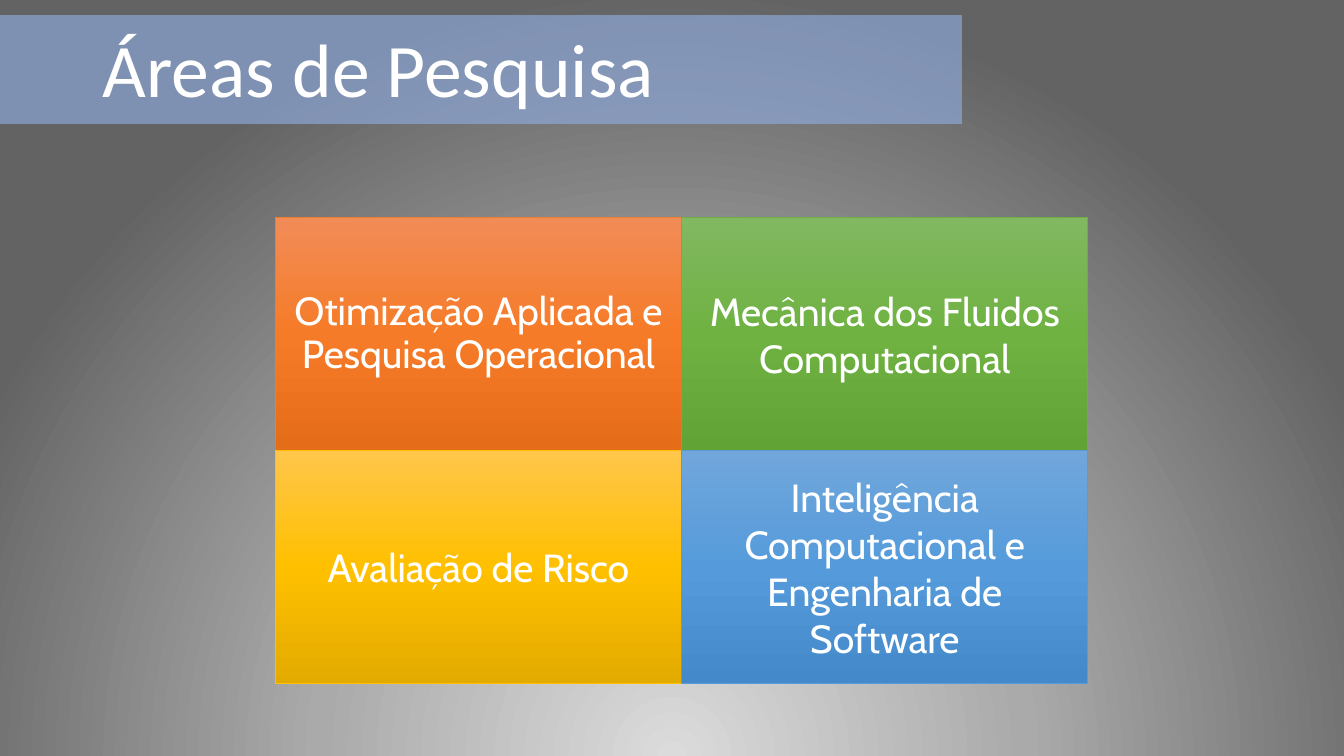
from pptx import Presentation
from pptx import util as u
from pptx.dml.color import RGBColor
from pptx.enum import shapes, text
from pptx.oxml import parse_xml
from pptx.oxml.ns import nsdecls, qn
from lxml import etree

HUES = {
    "white": "FFFFFF",
    "band": "8FAADC",
    "back": ["DBDBDB", "AAAAAA", "636363"],
    "orange": ["F18C57", "F67B28", "E56C19", "ED7D31"],
    "green": ["81B861", "6FB242", "62A336", "70AD47"],
    "gold": ["FFC64B", "FFC000", "E3AB00", "FFC000"],
    "blue": ["71A6DB", "559BDB", "448ACA", "5B9BD5"],
}
LINEAR = '<a:lin ang="5400000" scaled="0"/>'
RADIAL = ('<a:path path="circle"><a:fillToRect l="50000" t="130000" '
          'r="50000" b="-30000"/></a:path>')


class Page:
    title_font = {"name": "Calibri", "size": u.Pt(54), "bold": False}
    tile_font = {"name": "Cabin", "size": u.Pt(28)}

    def __init__(self, deck):
        self.slide = deck.slides.add_slide(deck.slide_layouts[5])

    def rect(self, *box):
        shape = self.slide.shapes.add_shape(
            shapes.MSO_SHAPE.RECTANGLE, *map(u.Inches, box))
        shape.shadow.inherit = False
        shape.line.fill.background()
        return shape

    def blend(self, shape, hues, mid, kind):
        stops = "".join(
            f'<a:gs pos="{pos * 1000}"><a:srgbClr val="{hue}"/></a:gs>'
            for pos, hue in zip((0, mid, 100), hues))
        grad = parse_xml(f'<a:gradFill {nsdecls("a")} rotWithShape="1">'
                         f'<a:gsLst>{stops}</a:gsLst>{kind}</a:gradFill>')
        shape._element.spPr.find(qn("a:prstGeom")).addnext(grad)

    def label(self, shape, words, font, align, space):
        frame = shape.text_frame
        frame.text = words
        frame.word_wrap = True
        frame.vertical_anchor = text.MSO_ANCHOR.MIDDLE
        para = frame.paragraphs[0]
        para.alignment = align
        para.line_spacing = space
        style = para.runs[0].font
        for key, value in font.items():
            setattr(style, key, value)
        style.color.rgb = RGBColor.from_string(HUES["white"])

    def back(self):
        self.blend(self.rect(0, 0, 13.33, 7.5), HUES["back"], 46, RADIAL)

    def band(self):
        shape = self.rect(0, 0.15, 9.54, 1.08)
        shape.fill.solid()
        shape.fill.fore_color.rgb = RGBColor.from_string(HUES["band"])
        hue = shape._element.spPr.find(".//" + qn("a:srgbClr"))
        etree.SubElement(hue, qn("a:alpha")).set("val", "66000")

    def title(self, words):
        shape = self.slide.shapes.title
        box = {"left": 0.92, "top": 0, "width": 10.99, "height": 1.45}
        for key, value in box.items():
            setattr(shape, key, u.Inches(value))
        self.label(shape, words, self.title_font, text.PP_ALIGN.LEFT, 0.9)
        self.slide.shapes._spTree.append(shape._element)

    def tile(self, box, words, hue, space):
        shape = self.rect(*box)
        self.blend(shape, HUES[hue], 50, LINEAR)
        shape.line.color.rgb = RGBColor.from_string(HUES[hue][3])
        shape.line.width = u.Pt(0.5)
        self.label(shape, words, self.tile_font, text.PP_ALIGN.CENTER, space)


def main():
    deck = Presentation()
    deck.slide_width, deck.slide_height = u.Inches(13.33), u.Inches(7.5)
    page = Page(deck)
    page.back()
    page.band()
    page.title("Áreas de Pesquisa")
    areas = [
        ("Otimização Aplicada e Pesquisa Operacional", "orange", 0.9),
        ("Mecânica dos Fluidos Computacional", "green", 1.0),
        ("Avaliação de Risco", "gold", 1.0),
        ("Inteligência Computacional e Engenharia de Software", "blue", 1.0),
    ]
    wide, high = 4.03, 2.31
    for spot, (words, hue, space) in enumerate(areas):
        row, col = divmod(spot, 2)
        box = (2.73 + col * wide, 2.16 + row * high, wide, high)
        page.tile(box, words, hue, space)
    deck.save("out.pptx")


if __name__ == "__main__":
    main()
